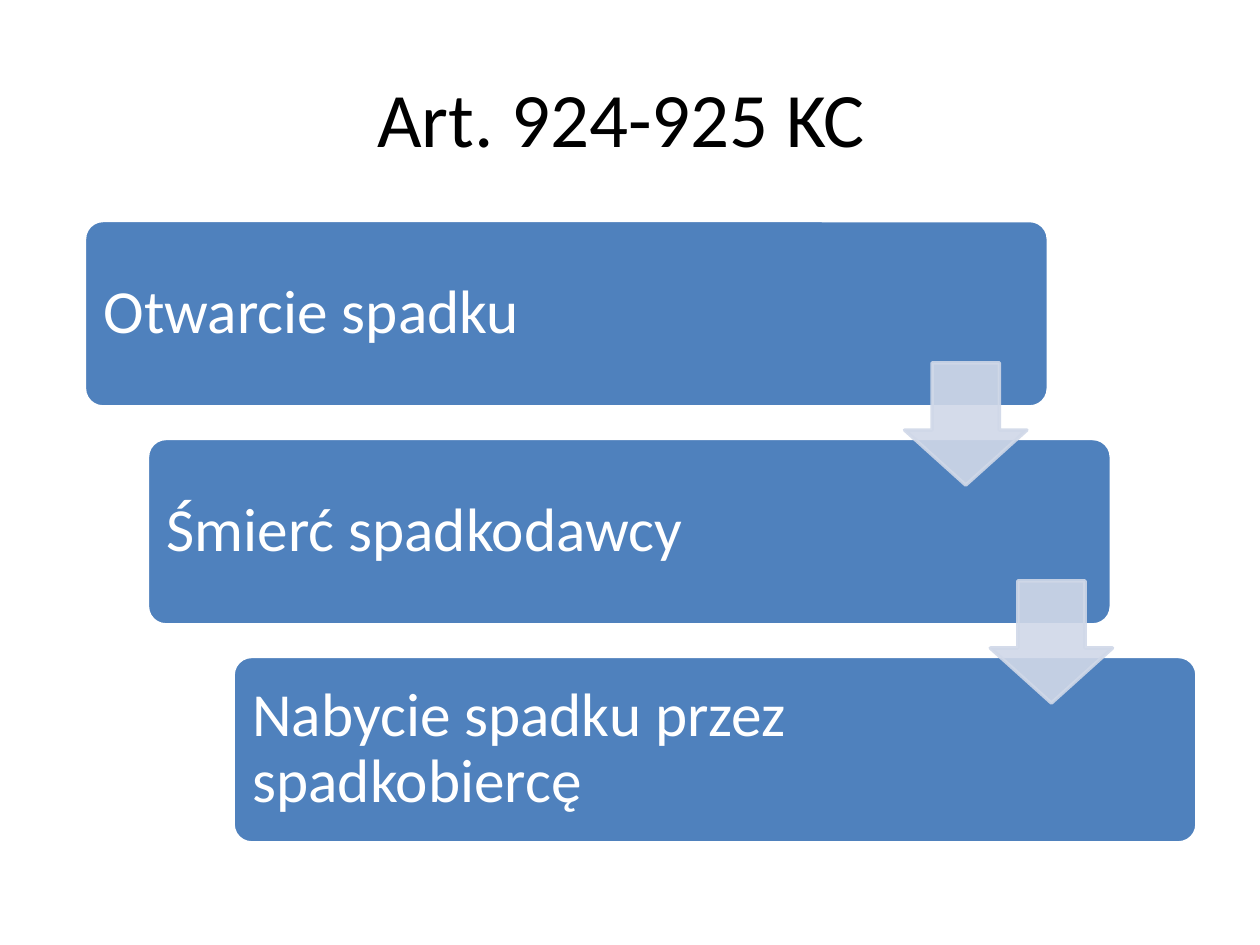
from lxml.etree import SubElement
from pptx import Presentation
from pptx.dml.color import RGBColor
from pptx.enum.shapes import MSO_SHAPE
from pptx.enum.text import MSO_ANCHOR, PP_ALIGN
from pptx.oxml.ns import qn
from pptx.util import Inches, Pt


def color(value):
    return RGBColor.from_string(value)


def add_block(kind, left, top, width, height, fill, line, adjustments):
    shape = page.shapes.add_shape(
        kind, Inches(left), Inches(top), Inches(width), Inches(height))
    shape.shadow.inherit = False
    shape.fill.solid()
    shape.fill.fore_color.rgb = color(fill)
    shape.line.color.rgb = color(line)
    shape.line.width = Pt(2)
    for index, value in enumerate(adjustments):
        shape.adjustments[index] = value
    return shape


deck = Presentation()
deck.slide_width, deck.slide_height = Inches(10), Inches(7.5)
page = deck.slides.add_slide(deck.slide_layouts[5])

# Title
title = page.shapes.title
title.left, title.top = Inches(0.5), Inches(0.3)
title.width, title.height = Inches(9), Inches(1.25)
title.text_frame.text = "Art. 924-925 KC "
title.text_frame.vertical_anchor = MSO_ANCHOR.MIDDLE
heading = title.text_frame.paragraphs[0]
heading.alignment = PP_ALIGN.CENTER
heading.font.name = "Calibri"
heading.font.size = Pt(44)
heading.font.color.rgb = color("000000")

# Staircase of steps
first_top, step_pitch = 1.75, 1.73
steps = [
    (0.67, "Otwarcie spadku"),
    (1.17, "Śmierć spadkodawcy"),
    (1.85, "Nabycie spadku przez spadkobiercę"),
]
for row, (left, label) in enumerate(steps):
    step = add_block(MSO_SHAPE.ROUNDED_RECTANGLE, left, first_top + row * step_pitch,
                     7.65, 1.48, "4F81BD", "FFFFFF", [0.1])
    frame = step.text_frame
    frame.word_wrap = True
    frame.vertical_anchor = MSO_ANCHOR.MIDDLE
    frame.margin_left = frame.margin_top = frame.margin_bottom = Inches(0.11)
    frame.margin_right = Inches(1.75)  # keeps the text clear of the arrow
    frame.text = label
    para = frame.paragraphs[0]
    para.alignment = PP_ALIGN.LEFT
    para.line_spacing = 0.9
    para.font.name = "Calibri"
    para.font.size = Pt(35)
    para.font.color.rgb = color("FFFFFF")

# Translucent arrows between the steps
for row, left in enumerate([7.18, 7.86]):
    arrow = add_block(MSO_SHAPE.DOWN_ARROW, left, 2.88 + row * step_pitch,
                      0.97, 0.97, "D0D8E8", "D0D8E8", [0.55, 0.45])
    # Adjustments run in the order head length, shaft width
    arrow.adjustments[0], arrow.adjustments[1] = 0.55, 0.45
    for tint in arrow._element.spPr.iter(qn("a:srgbClr")):
        SubElement(tint, qn("a:alpha")).set("val", "90000")

deck.save("out.pptx")
